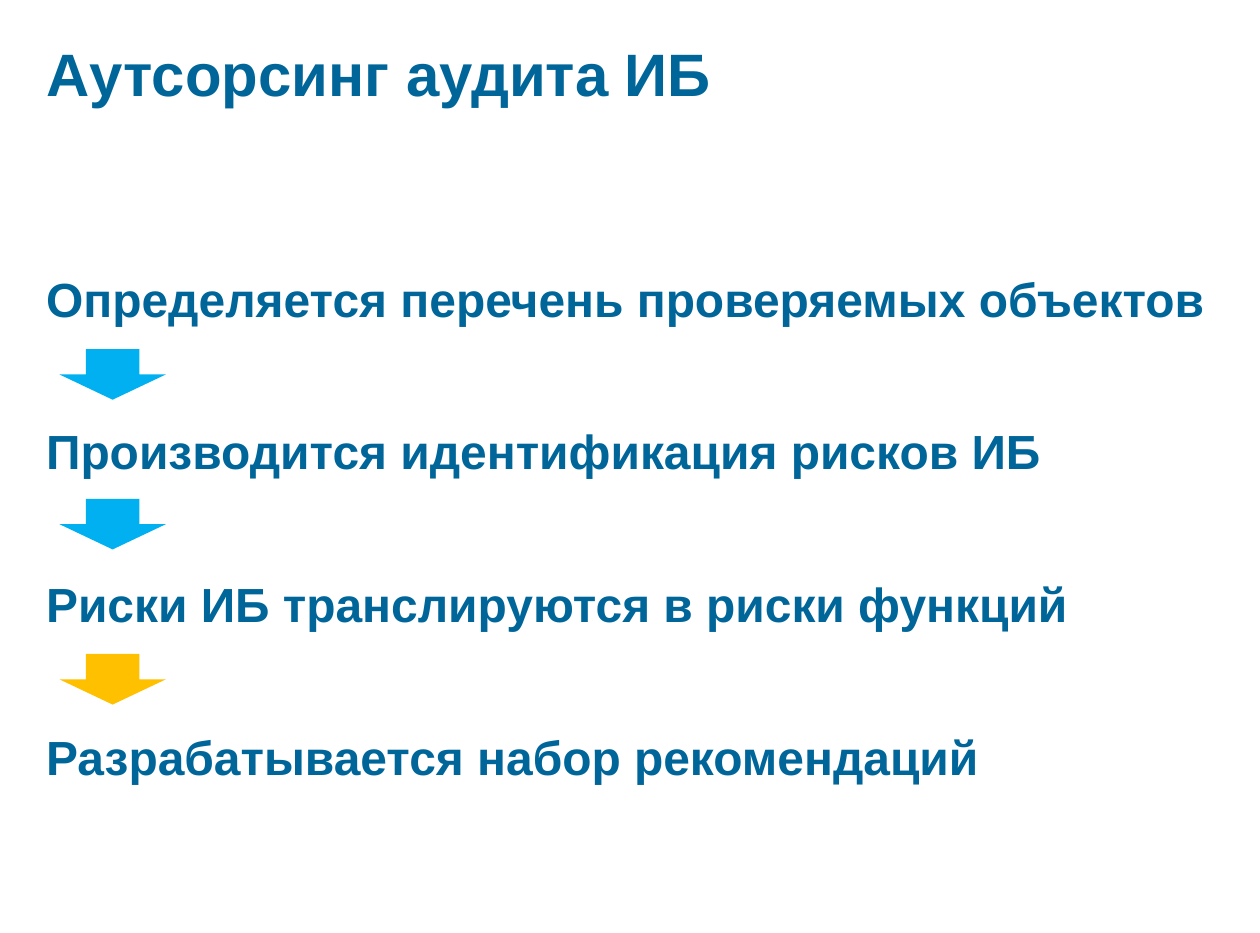
from pptx import Presentation
from pptx.dml.color import RGBColor
from pptx.enum.shapes import MSO_SHAPE
from pptx.enum.text import MSO_ANCHOR, PP_ALIGN
from pptx.util import Inches, Pt

TEAL = RGBColor(0x00, 0x66, 0x99)
SKY = RGBColor(0x00, 0xB0, 0xF0)
AMBER = RGBColor(0xFF, 0xC0, 0x00)

LEFT = 0.33
FIRST_STEP_TOP = 2.45
STEP_PITCH = 1.417
STEP_WIDTH = 11.1

STEPS = [
    "Определяется перечень проверяемых объектов",
    "Производится идентификация рисков ИБ",
    "Риски ИБ транслируются в риски функций",
    "Разрабатывается набор рекомендаций",
]
ARROWS = [(3.24, SKY), (4.63, SKY), (6.07, AMBER)]


def write_heading(box, text, size):
    frame = box.text_frame
    frame.text = text
    frame.word_wrap = True
    frame.vertical_anchor = MSO_ANCHOR.TOP
    para = frame.paragraphs[0]
    para.alignment = PP_ALIGN.LEFT
    font = para.runs[0].font
    font.name = "Arial"
    font.size = Pt(size)
    font.bold = True
    font.color.rgb = TEAL


deck = Presentation()
deck.slide_width = Inches(11.69)
deck.slide_height = Inches(8.66)
page = deck.slides.add_slide(deck.slide_layouts.get_by_name("Title Only"))

title = page.shapes.title
title.left, title.top = Inches(LEFT), Inches(0.29)
title.width, title.height = Inches(6.44), Inches(0.77)
write_heading(title, "Аутсорсинг аудита ИБ", 40)
title.text_frame.word_wrap = False

for row, step in enumerate(STEPS):
    top = FIRST_STEP_TOP + row * STEP_PITCH
    box = page.shapes.add_textbox(
        Inches(LEFT), Inches(top), Inches(STEP_WIDTH), Inches(0.64)
    )
    write_heading(box, step, 32)

for top, colour in ARROWS:
    arrow = page.shapes.add_shape(
        MSO_SHAPE.DOWN_ARROW, Inches(0.55), Inches(top), Inches(0.99), Inches(0.47)
    )
    arrow.shadow.inherit = False
    arrow.fill.solid()
    arrow.fill.fore_color.rgb = colour
    arrow.line.fill.background()

deck.save("out.pptx")
